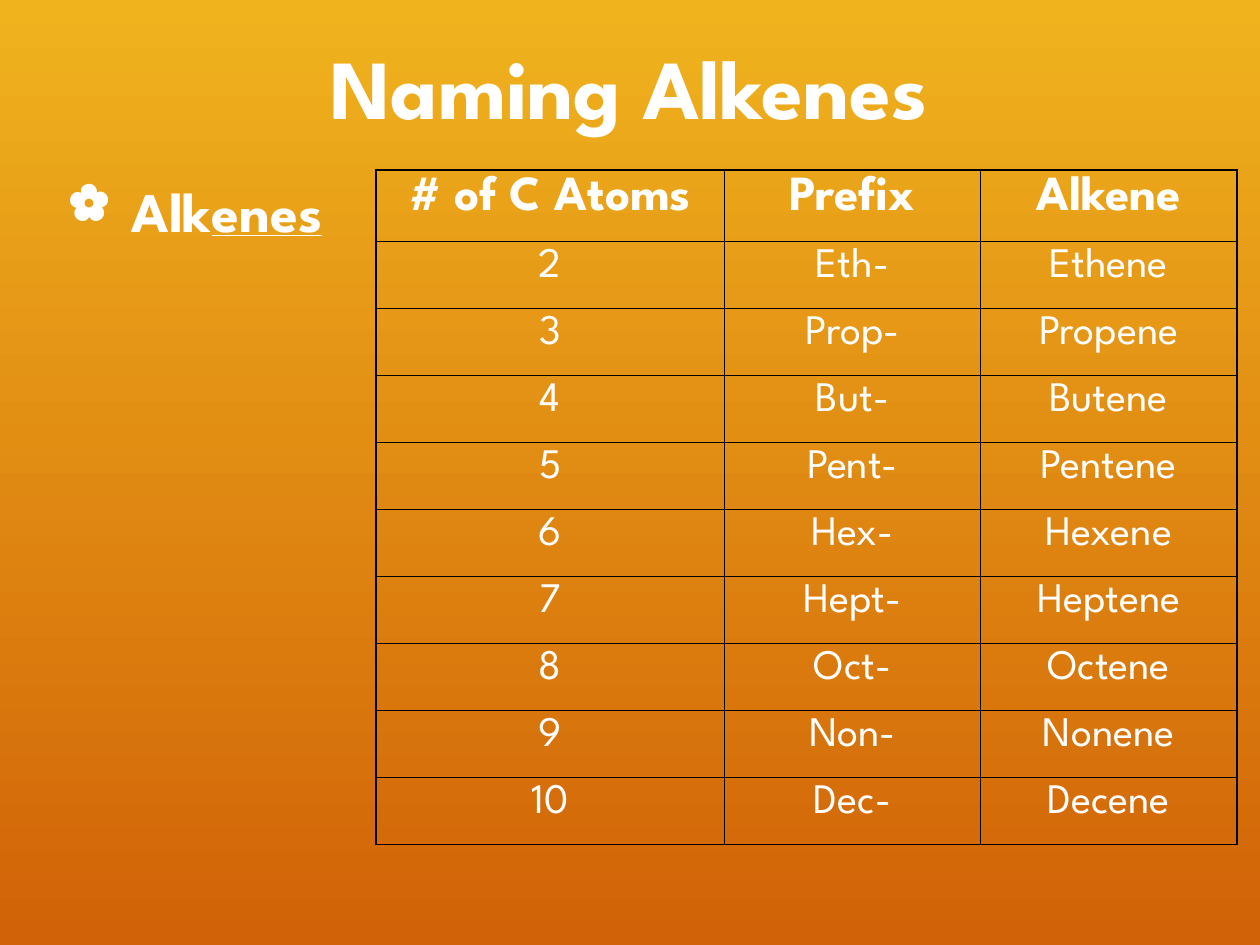
from lxml.etree import SubElement
from pptx import Presentation
from pptx.dml.color import RGBColor
from pptx.enum.text import MSO_ANCHOR, PP_ALIGN
from pptx.oxml.ns import qn
from pptx.util import Pt

FONT = "League Spartan"
WHITE = RGBColor(0xFF, 0xFF, 0xFF)
BLACK = RGBColor(0x00, 0x00, 0x00)
AMBER = RGBColor(0xF0, 0xB3, 0x1E)
BURNT_ORANGE = RGBColor(0xD1, 0x62, 0x07)

TITLE_FORMAT = {"size": Pt(48), "bold": True}
BULLET_FORMAT = {"size": Pt(32), "bold": True}
HEADER_FORMAT = {"size": Pt(28), "bold": True}
CELL_FORMAT = {"size": Pt(24), "bold": False}

HEADERS = ["# of C Atoms", "Prefix", "Alkene"]
PREFIXES = ["Eth", "Prop", "But", "Pent", "Hex", "Hept", "Oct", "Non", "Dec"]
COLUMN_WIDTHS = [Pt(199.2), Pt(146.4), Pt(146.4)]
ROW_HEIGHT = Pt(38.3)


def add_run(paragraph, text, **format_values):
    run = paragraph.add_run()
    run.text = text
    run.font.color.rgb = WHITE
    for name, value in {"name": FONT, **format_values}.items():
        setattr(run.font, name, value)


def paint_background(slide):
    fill = slide.background.fill
    fill.gradient()
    fill.gradient_angle = 270
    for stop, color, position in zip(fill.gradient_stops, (AMBER, BURNT_ORANGE), (0, 1)):
        stop.color.rgb = color
        stop.position = position


def add_text_box(slide, left, top, width, height, anchor):
    """Add a wrapping text box and return its first paragraph."""
    frame = slide.shapes.add_textbox(left, top, width, height).text_frame
    frame.word_wrap = True
    frame.vertical_anchor = anchor
    return frame.paragraphs[0]


def add_title(slide, text):
    paragraph = add_text_box(slide, Pt(61), Pt(7), Pt(597), Pt(90), MSO_ANCHOR.MIDDLE)
    paragraph.alignment = PP_ALIGN.CENTER
    paragraph.line_spacing = 0.95
    add_run(paragraph, text, **TITLE_FORMAT)


def set_bullet(paragraph, character, indent, percent):
    properties = paragraph._p.get_or_add_pPr()
    properties.set("marL", str(indent))
    properties.set("indent", str(-indent))
    SubElement(properties, qn("a:buSzPct"), val=str(percent * 1000))
    SubElement(properties, qn("a:buChar"), char=character)


def add_bullet_text(slide, stem, ending):
    """Add the bulleted word with its ending underlined."""
    paragraph = add_text_box(slide, Pt(32), Pt(97.2), Pt(662), Pt(366), MSO_ANCHOR.TOP)
    set_bullet(paragraph, "✿", Pt(36), 90)
    add_run(paragraph, stem, **BULLET_FORMAT)
    add_run(paragraph, ending, underline=True, **BULLET_FORMAT)


def set_borders(cell, color, width):
    properties = cell._tc.get_or_add_tcPr()
    for side in ("lnL", "lnR", "lnT", "lnB"):
        line = SubElement(properties, qn(f"a:{side}"), w=str(width))
        fill = SubElement(line, qn("a:solidFill"))
        SubElement(fill, qn("a:srgbClr"), val=str(color))


def fill_cell(cell, text, format_values):
    set_borders(cell, BLACK, Pt(1))
    cell.fill.background()
    paragraph = cell.text_frame.paragraphs[0]
    paragraph.alignment = PP_ALIGN.CENTER
    add_run(paragraph, text, **format_values)


def add_alkene_table(slide):
    rows = [HEADERS] + [
        [str(count), f"{prefix}-", f"{prefix}ene"]
        for count, prefix in enumerate(PREFIXES, start=2)
    ]
    table = slide.shapes.add_table(
        len(rows), len(HEADERS), Pt(214.8), Pt(97.2),
        sum(COLUMN_WIDTHS), ROW_HEIGHT * len(rows),
    ).table
    for column, width in zip(table.columns, COLUMN_WIDTHS):
        column.width = width
    for row_index, texts in enumerate(rows):
        table.rows[row_index].height = ROW_HEIGHT
        format_values = CELL_FORMAT if row_index else HEADER_FORMAT
        for column_index, text in enumerate(texts):
            fill_cell(table.cell(row_index, column_index), text, format_values)


def main():
    presentation = Presentation()
    presentation.slide_width = Pt(720)
    presentation.slide_height = Pt(540)
    slide = presentation.slides.add_slide(presentation.slide_layouts[6])
    paint_background(slide)
    add_title(slide, "Naming Alkenes")
    add_bullet_text(slide, "Alk", "enes")
    add_alkene_table(slide)
    presentation.save("out.pptx")


if __name__ == "__main__":
    main()
